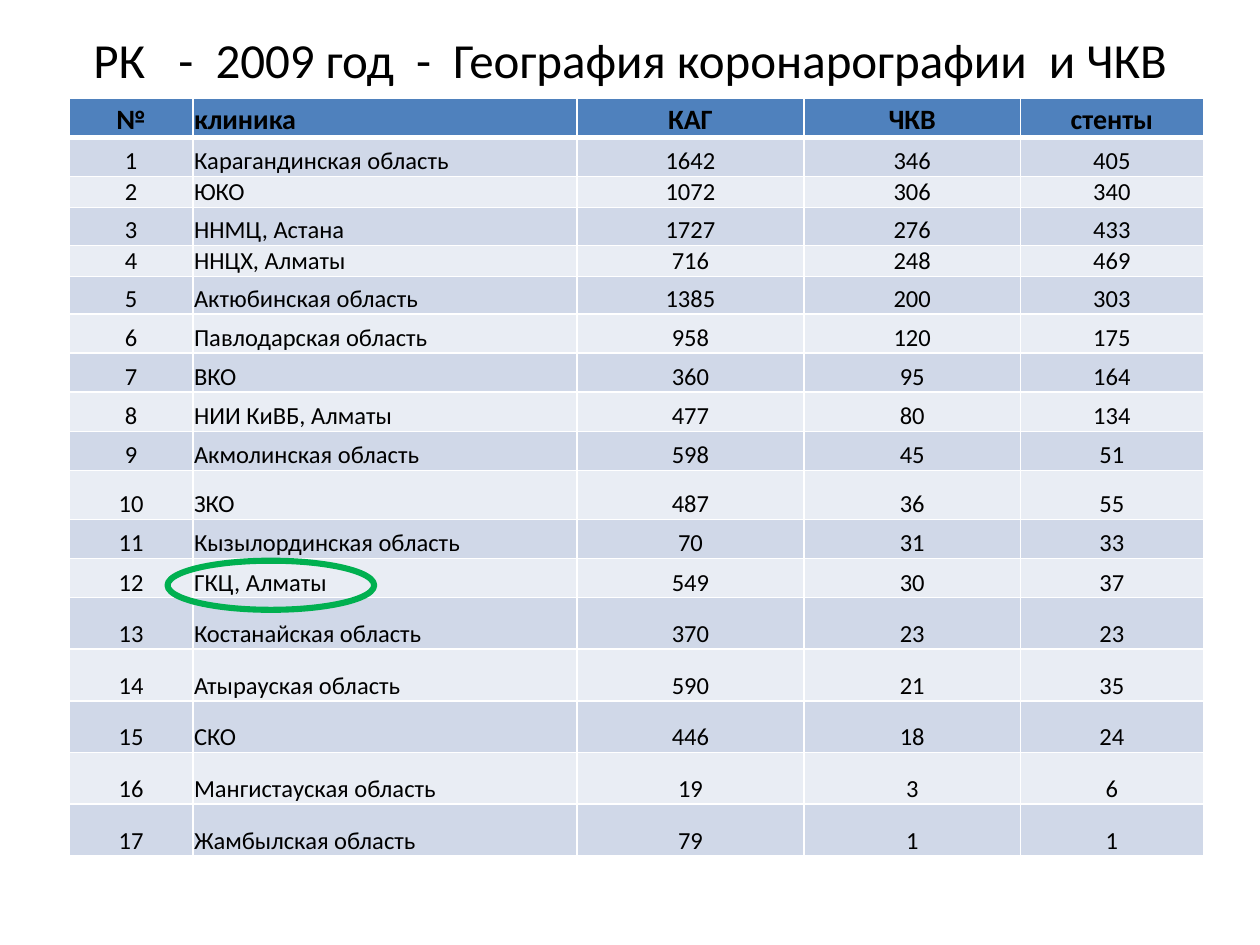
from dataclasses import dataclass

from lxml import etree
from pptx import Presentation
from pptx.dml.color import RGBColor
from pptx.enum import shapes, text
from pptx.oxml import ns
from pptx.util import Inches, Pt


@dataclass(frozen=True)
class Theme:
    font: str = "Calibri"
    ink: str = "000000"
    grid: str = "FFFFFF"
    head: str = "4F81BD"
    odd: str = "D0D8E8"
    even: str = "E9EDF4"
    ring: str = "00B050"
    title: int = 28
    label: int = 16
    body: int = 14


HEADS = ("№", "клиника", "КАГ", "ЧКВ", "стенты")
CLINICS = (
    ("Карагандинская область", 1642, 346, 405),
    ("ЮКО", 1072, 306, 340),
    ("ННМЦ, Астана", 1727, 276, 433),
    ("ННЦХ, Алматы", 716, 248, 469),
    ("Актюбинская область", 1385, 200, 303),
    ("Павлодарская область", 958, 120, 175),
    ("ВКО", 360, 95, 164),
    ("НИИ КиВБ, Алматы", 477, 80, 134),
    ("Акмолинская область", 598, 45, 51),
    ("ЗКО", 487, 36, 55),
    ("Кызылординская область", 70, 31, 33),
    ("ГКЦ, Алматы", 549, 30, 37),
    ("Костанайская область", 370, 23, 23),
    ("Атырауская область", 590, 21, 35),
    ("СКО", 446, 18, 24),
    ("Мангистауская область", 19, 3, 6),
    ("Жамбылская область", 79, 1, 1),
)
WIDTHS = (0.98, 3.05, 1.8, 1.72, 1.45)
HEIGHTS = (0.31, 0.31, 0.23, 0.3, 0.23, 0.3, *[0.31] * 4, 0.39,
           *[0.31] * 2, *[0.41] * 5)


class Deck:
    def __init__(self, theme):
        self.theme = theme
        self.file = Presentation()
        self.file.slide_width = Inches(10)
        self.file.slide_height = Inches(7.5)
        self.slide = self.file.slides.add_slide(self.file.slide_layouts[5])

    def style(self, frame, size, bold=False, align=text.PP_ALIGN.CENTER):
        for para in frame.paragraphs:
            para.alignment = align
            for run in para.runs:
                run.font.name = self.theme.font
                run.font.size = Pt(size)
                run.font.bold = bold
                run.font.color.rgb = RGBColor.from_string(self.theme.ink)

    def title(self, words, x, y, w, h):
        box = self.slide.shapes.title
        box.left, box.top, box.width, box.height = map(Inches, (x, y, w, h))
        frame = box.text_frame
        frame.text = words
        frame.word_wrap = True
        frame.auto_size = text.MSO_AUTO_SIZE.NONE
        frame.vertical_anchor = text.MSO_ANCHOR.MIDDLE
        self.style(frame, self.theme.title)

    def border(self, cell, sides):
        props = cell._tc.get_or_add_tcPr()
        for side, width in sides.items():
            line = etree.SubElement(props, ns.qn(f"a:ln{side}"), w=str(Pt(width)))
            fill = etree.SubElement(line, ns.qn("a:solidFill"))
            etree.SubElement(fill, ns.qn("a:srgbClr"), val=self.theme.grid)

    def cell(self, cell, words, row, col):
        head = row == 0
        cell.text = str(words)
        cell.vertical_anchor = text.MSO_ANCHOR.BOTTOM
        cell.margin_left = cell.margin_right = cell.margin_top = Inches(0.01)
        cell.margin_bottom = 0
        self.border(cell, {"L": 1, "R": 1, "T": 3 if row == 1 else 1,
                           "B": 3 if head else 1})
        shade = self.theme.odd if row % 2 else self.theme.even
        cell.fill.solid()
        cell.fill.fore_color.rgb = RGBColor.from_string(
            self.theme.head if head else shade)
        align = text.PP_ALIGN.LEFT if col == 1 else text.PP_ALIGN.CENTER
        size = self.theme.label if head else self.theme.body
        self.style(cell.text_frame, size, head, align)

    def table(self, rows, widths, heights, x, y):
        grid = self.slide.shapes.add_table(
            len(rows), len(widths), Inches(x), Inches(y),
            Inches(sum(widths)), Inches(sum(heights))).table
        for col, width in zip(grid.columns, widths):
            col.width = Inches(width)
        for line, height in zip(grid.rows, heights):
            line.height = Inches(height)
        for row, values in enumerate(rows):
            for col, value in enumerate(values):
                self.cell(grid.cell(row, col), value, row, col)

    def ring(self, x, y, w, h):
        oval = self.slide.shapes.add_shape(
            shapes.MSO_SHAPE.OVAL, *map(Inches, (x, y, w, h)))
        oval.shadow.inherit = False
        oval.fill.background()
        oval.line.color.rgb = RGBColor.from_string(self.theme.ring)
        oval.line.width = Pt(3.5)


def main():
    deck = Deck(Theme())
    deck.title("РК   -  2009 год  -  География коронарографии  и ЧКВ",
               0.5, 0.16, 9, 0.62)
    rows = [HEADS, *((num, *line) for num, line in enumerate(CLINICS, 1))]
    deck.table(rows, WIDTHS, HEIGHTS, 0.55, 0.78)
    deck.ring(1.33, 4.45, 1.64, 0.39)
    deck.file.save("out.pptx")


if __name__ == "__main__":
    main()
